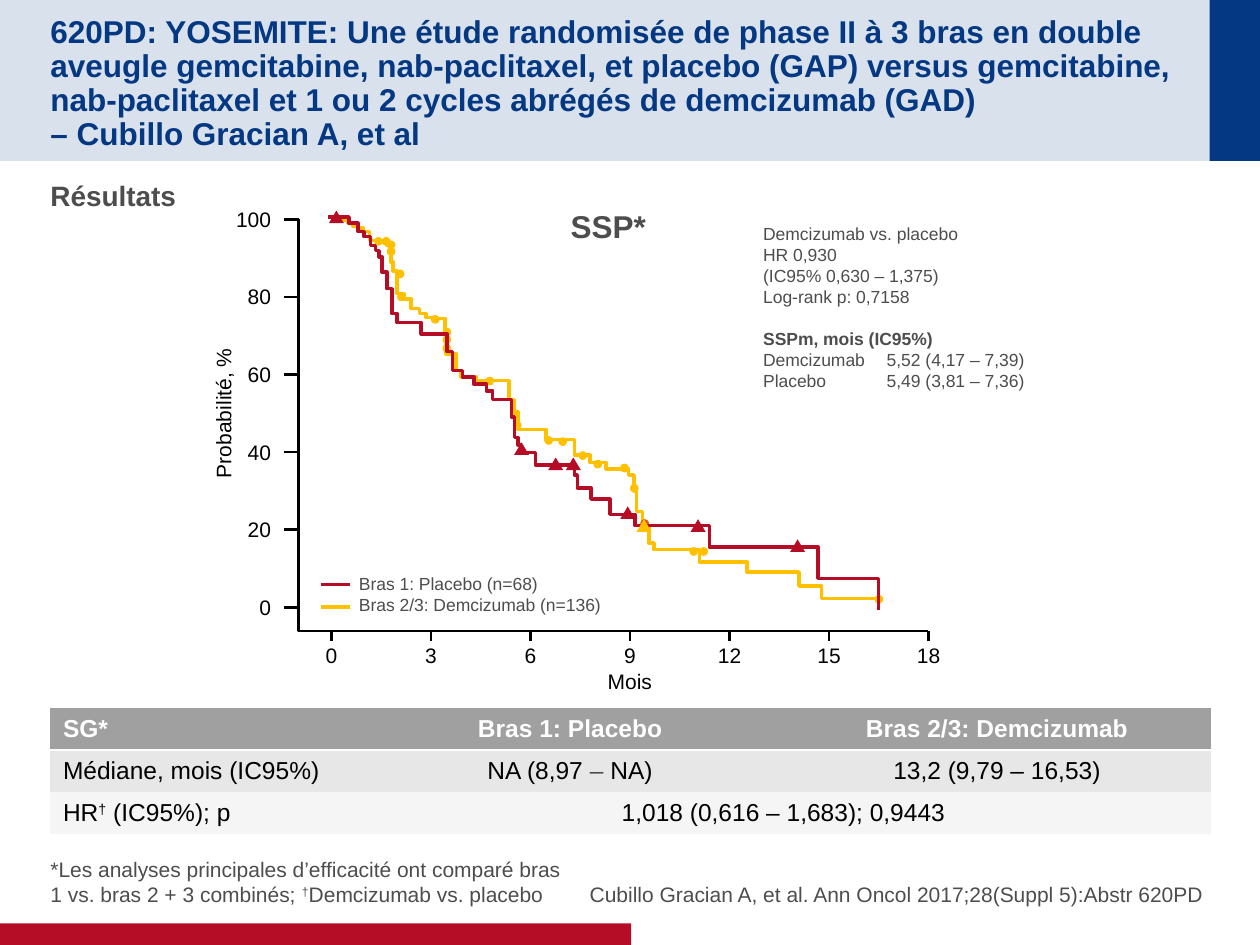
from collections import namedtuple

from lxml import etree
from pptx import Presentation
from pptx.dml.color import RGBColor
from pptx.enum import shapes, text
from pptx.oxml import ns
from pptx.util import Pt

Box = namedtuple("Box", "left top width height")

NAVY, PALE_BLUE = RGBColor(0x04, 0x38, 0x82), RGBColor(0xD9, 0xE1, 0xEC)
RED, YELLOW = RGBColor(0xB6, 0x0D, 0x27), RGBColor(0xFF, 0xC0, 0x00)
ORANGE, DARK_GREY = RGBColor(0xE7, 0x5B, 0x00), RGBColor(0x4D, 0x4D, 0x4D)
BLACK, WHITE = RGBColor(0, 0, 0), RGBColor(0xFF, 0xFF, 0xFF)
HEADER_GREY, ROW_GREY, LAST_GREY = (RGBColor(v, v, v) for v in (0xA0, 0xE7, 0xF5))
LEFT, CENTER, RIGHT = text.PP_ALIGN.LEFT, text.PP_ALIGN.CENTER, text.PP_ALIGN.RIGHT
TOP, MIDDLE, BOTTOM = (text.MSO_ANCHOR.TOP, text.MSO_ANCHOR.MIDDLE, text.MSO_ANCHOR.BOTTOM)
NO_STYLE_TABLE = "{2D5ABB26-0587-4C30-8999-92F81FD0307C}"

# Each pair is (month, probability in %) just after a drop.
PLACEBO_DROPS = [
    (0.53, 99), (0.8, 96.8), (0.99, 95.5), (1.18, 93.2), (1.33, 91.9), (1.44, 90.3),
    (1.52, 86.4), (1.67, 82.1), (1.82, 75.7), (1.97, 73.4), (2.7, 70.5), (3.49, 65.9),
    (3.65, 61), (3.95, 59.4), (4.29, 57.5), (4.67, 55.8), (4.86, 53.6), (5.43, 49),
    (5.51, 43.8), (5.62, 41.9), (5.7, 39.9), (6.15, 36.7), (7.33, 34.1), (7.41, 30.8),
    (7.82, 27.9), (8.39, 24), (9.15, 21.1), (11.39, 15.6), (14.66, 7.5), (16.48, -0.6)]
DEMCIZUMAB_DROPS = [
    (0.38, 99.7), (0.49, 99), (0.65, 98.1), (0.8, 97.7), (0.95, 96.8), (1.14, 94.5),
    (1.67, 93.2), (1.79, 89), (1.86, 86.7), (1.97, 80.8), (2.2, 79.5), (2.39, 77),
    (2.66, 75.7), (2.85, 74.7), (3.04, 74.4), (3.42, 70.8), (3.46, 65.3), (3.76, 61),
    (3.91, 59.4), (4.37, 58.4), (5.36, 53.6), (5.51, 50.3), (5.62, 45.8), (6.46, 43.2),
    (7.33, 39.3), (7.79, 37.3), (8.28, 35.7), (8.96, 34.1), (9.12, 29.9), (9.19, 24.7),
    (9.38, 21.1), (9.57, 16.6), (9.72, 14.9), (11.09, 11.7), (12.53, 9.1), (14.09, 5.5),
    (14.77, 2.3), (16.48, 2.3)]
DEMCIZUMAB_CENSORED = [
    (16.5, 2.1), (11.22, 14.4), (10.92, 14.4), (9.13, 30.7), (8.83, 35.9), (8.03, 36.9),
    (7.58, 39.1), (6.97, 42.7), (6.55, 43), (5.6, 46.9), (5.56, 49.8), (4.77, 58.3),
    (3.48, 66.7), (3.48, 69), (3.48, 70.9), (3.13, 74.2), (2.11, 80), (2.07, 85.9),
    (1.8, 91.7), (1.8, 93.4), (1.65, 94.3), (1.42, 94.3)]
PLACEBO_CENSORED = [(14.05, 15.9), (11.05, 21.1), (8.93, 24.4), (7.29, 37),
                    (6.76, 37), (5.73, 40.9), (0.15, 100.6)]


def set_values(target, values):
    for name, value in values.items():
        setattr(target, name, value)


def place(shape, box):
    set_values(shape, {name: Pt(v) for name, v in box._asdict().items()})


def write(paragraph, content, size, color, bold=False, align=LEFT):
    """Write content, given as a string or as (string, colour) pairs; daggers are raised."""
    paragraph.alignment = align
    pieces = [(content, color)] if isinstance(content, str) else content
    for words, shade in pieces:
        for i, line in enumerate(words.split("\n")):
            if i:
                paragraph.add_line_break()
            for j, part in enumerate(line.split("†")):
                for chunk, raised in (("†", True),) * (j > 0) + ((part, False),):
                    if chunk:
                        run = paragraph.add_run()
                        run.text = chunk
                        set_values(run.font, {"size": Pt(size), "name": "Arial", "bold": bold})
                        run.font.color.rgb = shade
                        if raised:
                            run._r.get_or_add_rPr().set("baseline", "30000")


def add_label(slide, box, lines, size, color, bold=False, align=LEFT, anchor=TOP, wrap=False):
    label = slide.shapes.add_textbox(*map(Pt, box))
    frame = label.text_frame
    set_values(frame, {"word_wrap": wrap, "vertical_anchor": anchor})
    for i, line in enumerate(lines):
        paragraph = frame.add_paragraph() if i else frame.paragraphs[0]
        write(paragraph, line, size, color, bold, align)
    return label


def add_solid(slide, kind, box, color):
    solid = slide.shapes.add_shape(kind, *map(Pt, box))
    solid.shadow.inherit = False
    solid.fill.solid()
    solid.fill.fore_color.rgb = color
    solid.line.fill.background()
    return solid


def add_line(slide, start, end, color, width):
    line = slide.shapes.add_connector(shapes.MSO_CONNECTOR.STRAIGHT, *map(Pt, start + end))
    line.line.color.rgb, line.line.width = color, Pt(width)
    etree.SubElement(line._element.spPr, ns.qn("a:effectLst"))


def add_path(slide, points, color, width):
    (x, y), *others = [(Pt(x), Pt(y)) for x, y in points]
    builder = slide.shapes.build_freeform(x, y)
    builder.add_line_segments(others, close=False)
    path = builder.convert_to_shape()
    path.shadow.inherit = False
    path.fill.background()
    path.line.color.rgb, path.line.width = color, Pt(width)


def add_backdrop(slide, width, height):
    bands = [(Box(0, 0, width, 92), PALE_BLUE), (Box(width - 28.8, 0, 28.8, 92), NAVY),
             (Box(0, height - 12.3, 360.7, 12.3), RED)]
    for depth, (box, color) in enumerate(bands, start=2):
        band = add_solid(slide, shapes.MSO_SHAPE.RECTANGLE, box, color)
        slide.shapes._spTree.insert(depth, band._element)


def fill_placeholder(holder, box, content, size, color, bold=False, align=LEFT,
                     anchor=TOP, pad=(0, 0), spacing=1.0, after=4):
    place(holder, box)
    frame = holder.text_frame
    set_values(frame, {"margin_left": 0, "margin_right": 0, "margin_top": Pt(pad[0]),
                       "margin_bottom": Pt(pad[1]), "vertical_anchor": anchor,
                       "word_wrap": True, "auto_size": text.MSO_AUTO_SIZE.NONE})
    paragraph = frame.paragraphs[0]
    set_values(paragraph, {"line_spacing": spacing, "space_before": Pt(0),
                           "space_after": Pt(after)})
    write(paragraph, content, size, color, bold, align)
    properties = paragraph._p.get_or_add_pPr()
    properties.set("marL", "0")
    properties.set("indent", "0")
    etree.SubElement(properties, ns.qn("a:buNone"))


def add_survival_plot(slide, box):
    """Draw axes, both curves and their censoring marks; box spans the two axes."""
    bottom = box.top + box.height

    def at(month, percent):
        return box.left + 18.8 + month * 18.96, box.top + (100 - percent) * 2.218

    add_path(slide, [(box.left, box.top), (box.left, bottom),
                     (box.left + box.width, bottom)], BLACK, 1.5)
    for percent in range(0, 101, 20):
        y = at(0, percent)[1]
        add_line(slide, (box.left - 8.6, y), (box.left, y), BLACK, 1.5)
        add_label(slide, Box(box.left - 48.6, y - 11, 40, 21.6), [str(percent)], 12, BLACK,
                  align=RIGHT, anchor=MIDDLE)
    for month in range(0, 19, 3):
        x = at(month, 0)[0]
        add_line(slide, (x, bottom), (x, bottom + 5.8), BLACK, 1.5)
        add_label(slide, Box(x - 14, bottom + 2.9, 28, 21.6), [str(month)], 12, BLACK,
                  align=CENTER)
    add_label(slide, Box(box.left - 87.8, box.top + 100, 89.3, 21.6), ["Probabilité, %"], 12,
              BLACK, align=CENTER).rotation = 270
    add_label(slide, Box(box.left + 169.2, bottom + 18, 40.3, 21.6), ["Mois"], 12, BLACK,
              align=CENTER)

    def add_curve(drops, color):
        level = 100.6
        points = [at(-0.11, level)]
        for month, percent in drops:
            points += [at(month, level), at(month, percent)]
            level = percent
        add_path(slide, points, color, 2)

    def add_marks(kind, spots, width, height, color):
        for spot in spots:
            x, y = at(*spot)
            add_solid(slide, kind, Box(x - width / 2, y - height / 2, width, height), color)

    circle, triangle = shapes.MSO_SHAPE.OVAL, shapes.MSO_SHAPE.ISOSCELES_TRIANGLE
    add_curve(DEMCIZUMAB_DROPS, YELLOW)
    add_marks(circle, DEMCIZUMAB_CENSORED, 5, 5, YELLOW)
    add_marks(circle, [(9.44, 21.6)], 5, 5, ORANGE)
    add_curve(PLACEBO_DROPS, RED)
    add_marks(triangle, PLACEBO_CENSORED, 8.6, 7.2, RED)
    add_marks(triangle, [(9.42, 21.1)], 8.6, 7.2, YELLOW)


def add_legend(slide, box):
    arms = [("Bras 1: Placebo (n=68)", RED), ("Bras 2/3: Demcizumab (n=136)", YELLOW)]
    add_label(slide, Box(box.left + 14.4, box.top, box.width - 14.4, box.height),
              [name for name, _ in arms], 10, DARK_GREY)
    for i, (_, color) in enumerate(arms):
        y = box.top + 10 + i * 13
        add_line(slide, (box.left, y), (box.left + 16.6, y), color, 2)


def add_statistics(slide, box):
    lines = ["Demcizumab vs. placebo", "HR 0,930", "(IC95% 0,630 – 1,375)",
             "Log-rank p: 0,7158", "SSPm, mois (IC95%)",
             "Demcizumab\t5,52 (4,17 – 7,39)", "Placebo\t5,49 (3,81 – 7,36)"]
    label = add_label(slide, box, lines, 10, DARK_GREY, wrap=True)
    heading, *medians = label.text_frame.paragraphs[4:]
    heading.space_before = Pt(12)
    heading.runs[0].font.bold = True
    for median in medians:
        tabs = etree.SubElement(median._p.get_or_add_pPr(), ns.qn("a:tabLst"))
        etree.SubElement(tabs, ns.qn("a:tab"), pos=str(Pt(70.6)), algn="l")


def add_survival_table(slide, box):
    rows = [(HEADER_GREY, WHITE, ["SG*", "Bras 1: Placebo", "Bras 2/3: Demcizumab"]),
            (ROW_GREY, BLACK, ["Médiane, mois (IC95%)",
                               [("NA (8,97 ", BLACK), ("–", DARK_GREY), (" NA)", BLACK)],
                               "13,2 (9,79 – 16,53)"]),
            (LAST_GREY, BLACK, ["HR† (IC95%); p", "1,018 (0,616 – 1,683); 0,9443", ""])]
    table = slide.shapes.add_table(3, 3, *map(Pt, box)).table
    table._tbl.tblPr.find(ns.qn("a:tableStyleId")).text = NO_STYLE_TABLE
    for column, width in zip(table.columns, (175, 244, 244)):
        column.width = Pt(width)
    table.cell(2, 1).merge(table.cell(2, 2))
    for r, (fill, color, contents) in enumerate(rows):
        table.rows[r].height = Pt(box.height / 3)
        for c, content in enumerate(contents):
            cell = table.cell(r, c)
            cell.vertical_anchor = MIDDLE
            cell.fill.solid()
            cell.fill.fore_color.rgb = fill
            write(cell.text_frame.paragraphs[0], content, 14, color, r == 0,
                  CENTER if c else LEFT)
            if r == 0:
                border = etree.Element(ns.qn("a:lnB"), w=str(Pt(1)))
                paint = etree.SubElement(border, ns.qn("a:solidFill"))
                etree.SubElement(paint, ns.qn("a:srgbClr"), val=str(WHITE))
                cell._tc.get_or_add_tcPr().insert(0, border)


def main():
    deck = Presentation()
    deck.slide_width, deck.slide_height = Pt(720), Pt(540)
    slide = deck.slides.add_slide(deck.slide_layouts.get_by_name("Comparison"))
    title, results, _, footnote, spare = slide.placeholders
    for unused in (_, spare):
        unused._element.getparent().remove(unused._element)
    add_backdrop(slide, 720, 540)
    fill_placeholder(title, Box(28.8, 14.4, 648.7, 63.4),
                     "620PD: YOSEMITE: Une étude randomisée de phase II à 3 bras en double "
                     "aveugle gemcitabine, nab-paclitaxel, et placebo (GAP) versus gemcitabine, "
                     "nab-paclitaxel et 1 ou 2 cycles abrégés de demcizumab (GAD) \n"
                     "– Cubillo Gracian A, et al",
                     18, NAVY, True, anchor=MIDDLE, pad=(3.6, 0), spacing=0.9, after=0)
    fill_placeholder(results, Box(28.8, 98.6, 662.4, 373.7), "Résultats", 16, DARK_GREY, True,
                     pad=(3.6, 3.6))
    fill_placeholder(footnote, Box(28.8, 480.2, 325.4, 38.2),
                     "*Les analyses principales d’efficacité ont comparé bras \n"
                     "1 vs. bras 2 + 3 combinés; †Demcizumab vs. placebo",
                     12, DARK_GREY, anchor=BOTTOM)
    add_label(slide, Box(319, 114.5, 58.3, 28.8), ["SSP*"], 18, DARK_GREY, True)
    add_survival_table(slide, Box(28.8, 404.6, 663, 72))
    add_survival_plot(slide, Box(170.6, 125.3, 360, 235.4))
    add_statistics(slide, Box(429, 123.8, 251.3, 116.6))
    add_legend(slide, Box(183.6, 324, 174.2, 31.7))
    citation = add_label(slide, Box(302.4, 480.2, 388.8, 38.2), [], 12, DARK_GREY)
    fill_placeholder(citation, Box(302.4, 480.2, 388.8, 38.2),
                     "Cubillo Gracian A, et al. Ann Oncol 2017;28(Suppl 5):Abstr 620PD ",
                     12, DARK_GREY, align=RIGHT, anchor=BOTTOM)
    deck.save("out.pptx")


if __name__ == "__main__":
    main()
